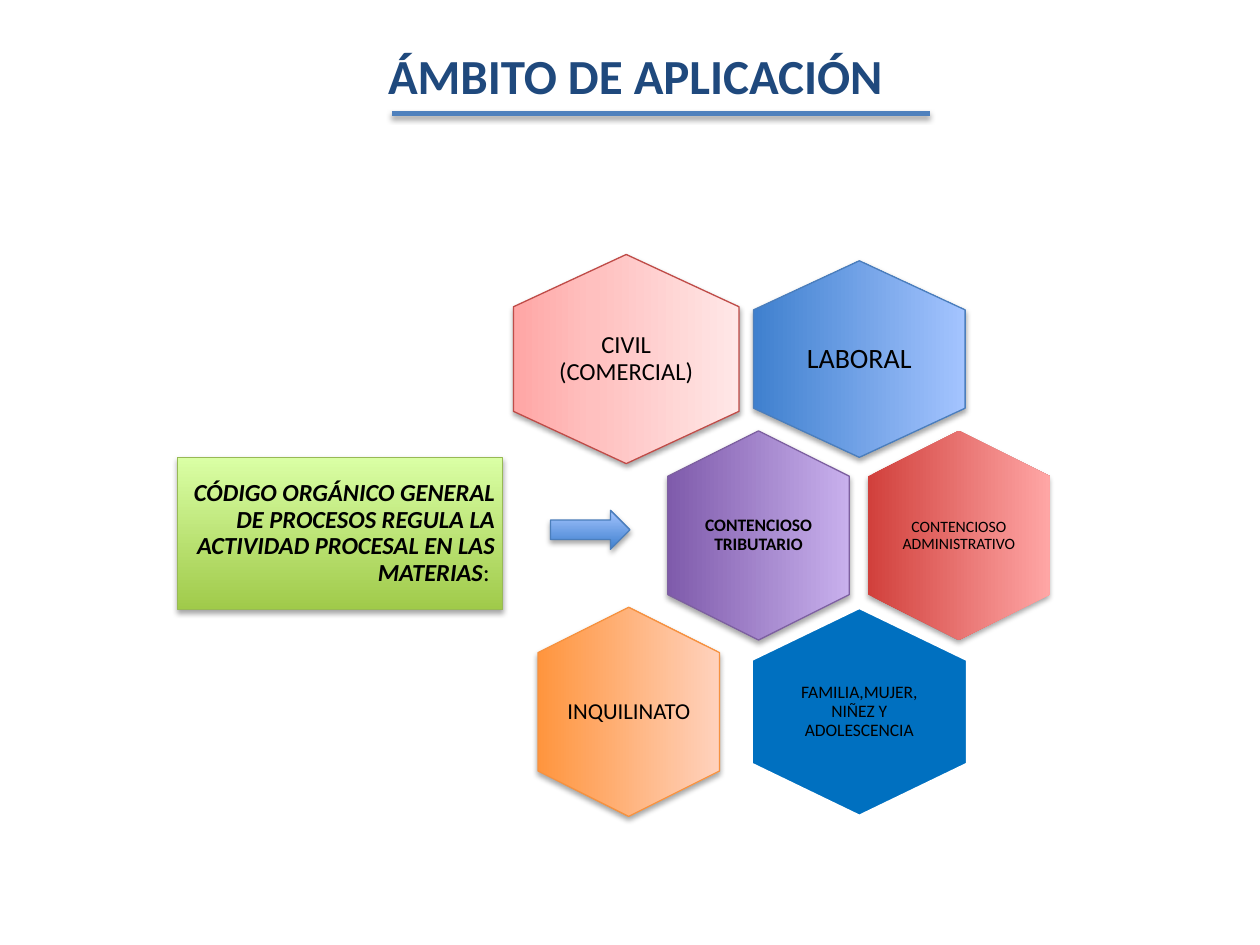
from lxml import etree
from pptx import Presentation
from pptx import util as u
from pptx.dml.color import RGBColor
from pptx.enum import shapes, text
from pptx.oxml.ns import qn

W, H = 10, 7.5
FONT = "Calibri"
COLORS = {
    "white": "FFFFFF", "black": "000000", "title": "1F497D", "rule": "4F81BD",
    "blue_line": "4B7EBC", "pink_line": "BF4C48", "purple_line": "7D60A0",
    "orange_line": "F69240", "green_line": "98B955", "family": "0070C0",
}
# Gradient stops: percent, colour
GRADIENTS = {
    "blue": [(0, "3F80CE"), (100, "A4C4FF")],
    "pink": [(0, "FFA6A5"), (35, "FFC0BF"), (100, "FFE7E7")],
    "purple": [(0, "7F5BAB"), (100, "C8B0ED")],
    "red": [(0, "D1403C"), (100, "FFA6A5")],
    "orange": [(0, "FF953E"), (100, "FFD2BD")],
    "green": [(0, "A0CA4A"), (100, "DAFFA5")],
}
TITLE = "ÁMBITO DE APLICACIÓN"
CODE = [("CÓDIGO ORGÁNICO GENERAL DE PROCESOS REGULA LA ACTIVIDAD "
         "PROCESAL EN LAS MATERIAS", True), (": ", False)]
# label, row, centre x, width, height, fill, line, font size, bold
SUBJECTS = [
    ("LABORAL", 0, 6.82, 1.68, 1.56, "blue", "blue_line", 16, False),
    ("CIVIL (COMERCIAL)", 0, 4.97, 1.79, 1.66, "pink", "pink_line", 14, False),
    ("CONTENCIOSO TRIBUTARIO", 1, 6.02, 1.44, 1.66, "purple", "purple_line", 10, True),
    ("CONTENCIOSO ADMINISTRATIVO", 1, 7.61, 1.44, 1.66, "red", None, 9, False),
    ("FAMILIA,MUJER, NIÑEZ Y ADOLESCENCIA", 2, 6.82, 1.72, 1.66, "family", "white", 10, False),
    ("INQUILINATO", 2, 4.99, 1.44, 1.66, "orange", "orange_line", 13, False),
]
FIRST_ROW, ROW_STEP = 0.38 * H, 1.4
LABEL_SHARE = 0.69

prs = Presentation()
prs.slide_width, prs.slide_height = u.Inches(W), u.Inches(H)
s = prs.slides.add_slide(prs.slide_layouts[6])


def rgb(name):
    return RGBColor.from_string(COLORS[name])


def box_at(x, y, w, h):
    return [u.Inches(v) for v in (x, y, w, h)]


def centred(cx, cy, w, h):
    return box_at(cx - w / 2, cy - h / 2, w, h)


def add_shadow(effects, alpha=35, dist=1.8):
    shadow = etree.SubElement(
        effects, qn("a:outerShdw"), blurRad=str(u.Pt(3.1)),
        dist=str(u.Pt(dist)), dir="5400000", rotWithShape="0")
    color = etree.SubElement(shadow, qn("a:srgbClr"), val=COLORS["black"])
    etree.SubElement(color, qn("a:alpha"), val=str(alpha * 1000))


def add_filled(kind, place, fill, line, line_width=0.75):
    """Add a preset shape; a gradient fill brings a soft shadow with it."""
    sp = s.shapes.add_shape(kind, *place)
    sp.shadow.inherit = False
    if fill in GRADIENTS:
        sp.fill.gradient()
        sp.fill.gradient_angle = 90
        stops = sp._element.spPr.find(".//" + qn("a:gsLst"))
        for old in list(stops):
            stops.remove(old)
        for pos, color in GRADIENTS[fill]:
            stop = etree.SubElement(stops, qn("a:gs"), pos=str(pos * 1000))
            etree.SubElement(stop, qn("a:srgbClr"), val=color)
        add_shadow(sp._element.spPr.find(qn("a:effectLst")))
    else:
        sp.fill.solid()
        sp.fill.fore_color.rgb = rgb(fill)
    if line:
        sp.line.color.rgb = rgb(line)
        sp.line.width = u.Pt(line_width)
    else:
        sp.line.fill.background()
    return sp


def write(sp, runs, size, align, color="black", inset=0.0, spacing=0.9):
    """Fill a shape with one paragraph of (text, bold, italic) runs."""
    tf = sp.text_frame
    tf.word_wrap = True
    tf.vertical_anchor = text.MSO_ANCHOR.MIDDLE
    tf.margin_left = tf.margin_right = u.Inches(inset)
    tf.margin_top = tf.margin_bottom = u.Inches(inset)
    p = tf.paragraphs[0]
    p.alignment = align
    p.line_spacing = spacing
    for words, bold, italic in runs:
        r = p.add_run()
        r.text = words
        r.font.name, r.font.size = FONT, u.Pt(size)
        r.font.bold, r.font.italic = bold, italic
        r.font.color.rgb = rgb(color)


title = add_filled(shapes.MSO_SHAPE.RECTANGLE, box_at(2.88, 0, 4.24, 1.02),
                   "white", "white", 2)
write(title, [(TITLE, True, False)], 28, text.PP_ALIGN.LEFT, "title",
      spacing=u.Pt(45.8))
title.text_frame.margin_left = u.Inches(0.2)

for label, row, cx, w, h, fill, line, size, bold in SUBJECTS:
    cy = FIRST_ROW + row * ROW_STEP
    # The hexagon stands on its point, so its sides swap before the turn
    hexagon = add_filled(shapes.MSO_SHAPE.HEXAGON, centred(cx, cy, h, w),
                         fill, line, 2 if line == "white" else 0.75)
    hexagon.adjustments[0] = 0.25
    hexagon.rotation = 90
    label_box = s.shapes.add_textbox(
        *centred(cx, cy, w * LABEL_SHARE, h * LABEL_SHARE))
    write(label_box, [(label, bold, False)], size, text.PP_ALIGN.CENTER)

code = add_filled(shapes.MSO_SHAPE.RECTANGLE, box_at(1.41, 3.63, 2.58, 1.21),
                  "green", "green_line")
write(code, [(words, strong, strong) for words, strong in CODE], 14,
      text.PP_ALIGN.RIGHT, inset=0.06)

add_filled(shapes.MSO_SHAPE.RIGHT_ARROW, box_at(4.37, 4.05, 0.63, 0.31),
           "blue", "blue_line")

rule = s.shapes.add_connector(shapes.MSO_CONNECTOR.STRAIGHT,
                              *box_at(3.11, 0.9, 7.38, 0.9))
rule.line.color.rgb = rgb("rule")
rule.line.width = u.Pt(3)
add_shadow(etree.SubElement(rule._element.spPr, qn("a:effectLst")), 38, 1.6)

prs.save("out.pptx")
